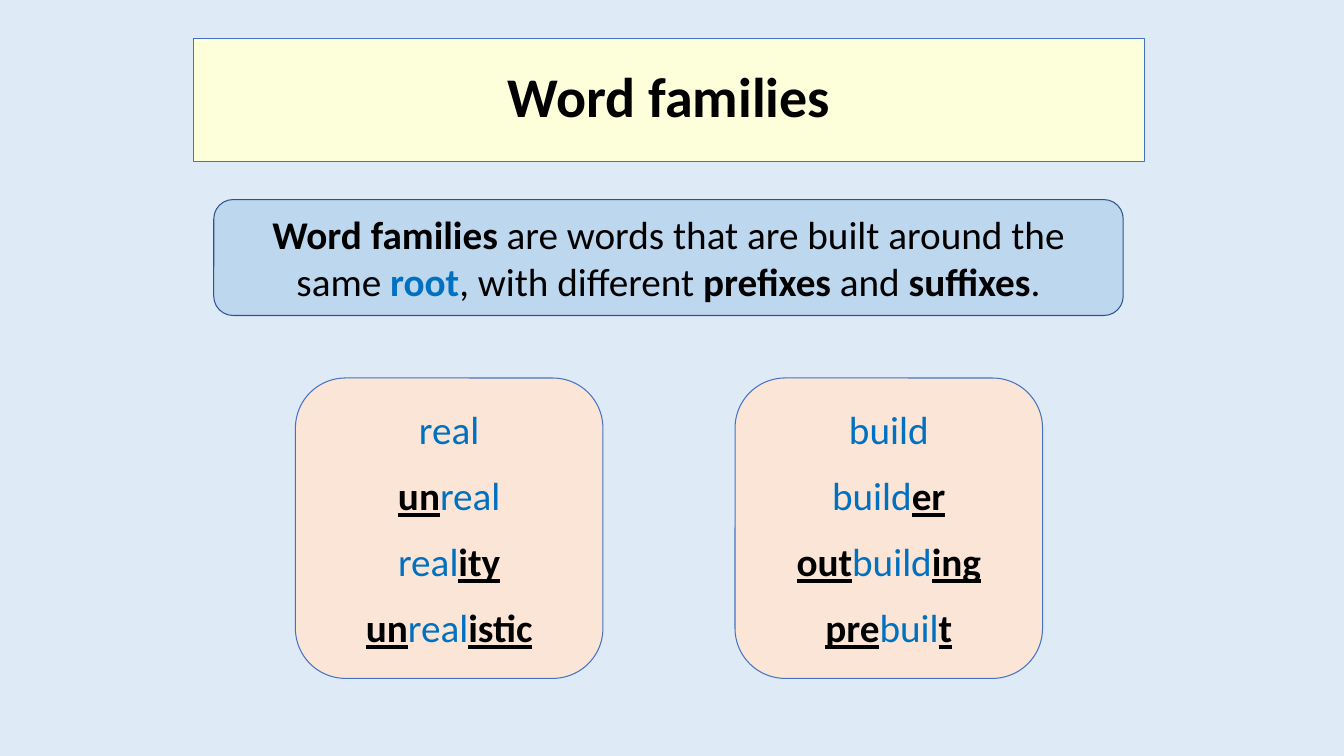
from pptx import Presentation
from pptx.dml.color import RGBColor
from pptx.enum import shapes, text
from pptx.util import Inches, Pt

BACKGROUND = RGBColor(0xDE, 0xEB, 0xF7)
CREAM = RGBColor(0xFD, 0xFE, 0xDA)
SKY = RGBColor(0xBD, 0xD7, 0xEE)
PEACH = RGBColor(0xFB, 0xE5, 0xD6)
BORDER = RGBColor(0x44, 0x72, 0xC4)
DARK_BORDER = RGBColor(0x2F, 0x52, 0x8F)
ROOT_BLUE = RGBColor(0x00, 0x70, 0xC0)
BLACK = RGBColor(0, 0, 0)

# Each style is colour, bold, underline.
PLAIN = (BLACK, False, False)
STRONG = (BLACK, True, False)
STRONG_ROOT = (ROOT_BLUE, True, False)
ROOT = (ROOT_BLUE, False, False)
AFFIX = (BLACK, True, True)

DEFINITION = [
    ("Word families", STRONG),
    (" are words that are built around the same ", PLAIN),
    ("root", STRONG_ROOT),
    (", with different ", PLAIN),
    ("prefixes ", STRONG),
    ("and ", PLAIN),
    ("suffixes", STRONG),
    (".", PLAIN),
]
# Each word is prefix, root, suffix.
FAMILIES = [
    [("", "real", ""), ("un", "real", ""), ("", "real", "ity"), ("un", "real", "istic")],
    [("", "build", ""), ("", "build", "er"), ("out", "build", "ing"), ("pre", "buil", "t")],
]


def paint(shape, fill, border):
    shape.fill.solid()
    shape.fill.fore_color.rgb = fill
    shape.line.color.rgb = border
    shape.line.width = Pt(0.75)


def add_title(page, left, top, width, height):
    title = page.shapes.title
    title.left, title.top, title.width, title.height = left, top, width, height
    paint(title, CREAM, BORDER)
    title.text_frame.text = "Word families"
    title.text_frame.vertical_anchor = text.MSO_ANCHOR.MIDDLE
    para = title.text_frame.paragraphs[0]
    para.alignment = text.PP_ALIGN.CENTER
    para.line_spacing = 0.9
    para.font.name = "Calibri"
    para.font.size = Pt(40)
    para.font.bold = True
    para.font.color.rgb = BLACK


def add_panel(page, box, fill, border, lines):
    """Draw a rounded box; each line is a list of (wording, style) spans."""
    panel = page.shapes.add_shape(shapes.MSO_SHAPE.ROUNDED_RECTANGLE, *box)
    panel.shadow.inherit = False
    paint(panel, fill, border)
    frame = panel.text_frame
    frame.word_wrap = True
    frame.vertical_anchor = text.MSO_ANCHOR.MIDDLE
    for index, line in enumerate(lines):
        para = frame.add_paragraph() if index else frame.paragraphs[0]
        para.alignment = text.PP_ALIGN.CENTER
        para.space_before = Pt(13.5)
        para.font.name = "Calibri"
        para.font.size = Pt(28)
        for wording, (color, bold, underline) in line:
            span = para.add_run()
            span.text = wording
            span.font.color.rgb = color
            span.font.bold = bold
            span.font.underline = underline


def add_families(page, left, top, width, height):
    """Place one card per family, the first and last at the ends of the box."""
    card_width = Inches(3.05)
    step = (width - card_width) // (len(FAMILIES) - 1)
    for index, family in enumerate(FAMILIES):
        lines = [
            [(part, style) for part, style in zip(word, (AFFIX, ROOT, AFFIX)) if part]
            for word in family
        ]
        box = (left + index * step, top, card_width, height)
        add_panel(page, box, PEACH, BORDER, lines)


def main():
    deck = Presentation()
    deck.slide_width, deck.slide_height = Inches(13.33), Inches(7.5)
    page = deck.slides.add_slide(deck.slide_layouts[5])
    page.background.fill.solid()
    page.background.fill.fore_color.rgb = BACKGROUND
    add_title(page, Inches(1.92), Inches(0.38), Inches(9.43), Inches(1.22))
    definition_box = (Inches(2.12), Inches(1.98), Inches(9.02), Inches(1.15))
    add_panel(page, definition_box, SKY, DARK_BORDER, [DEFINITION])
    add_families(page, Inches(2.93), Inches(3.75), Inches(7.41), Inches(2.98))
    deck.save("out.pptx")


if __name__ == "__main__":
    main()
